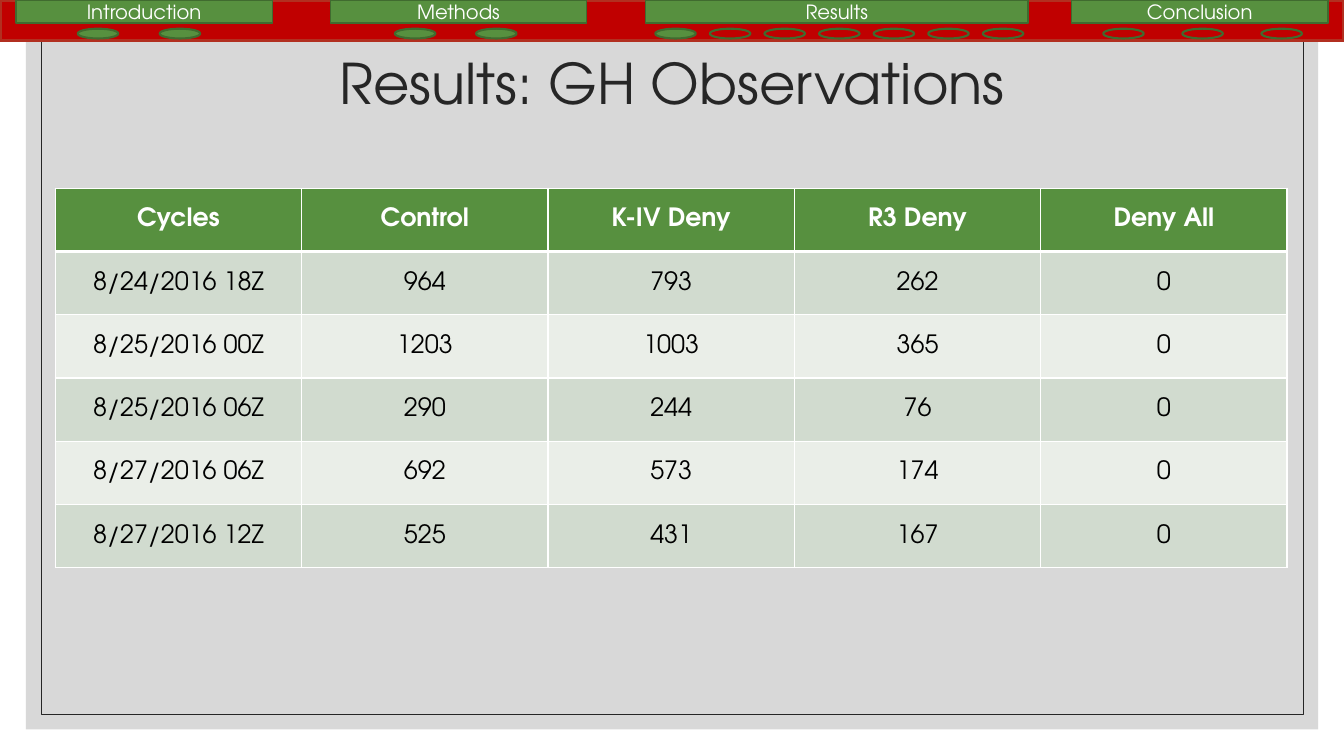
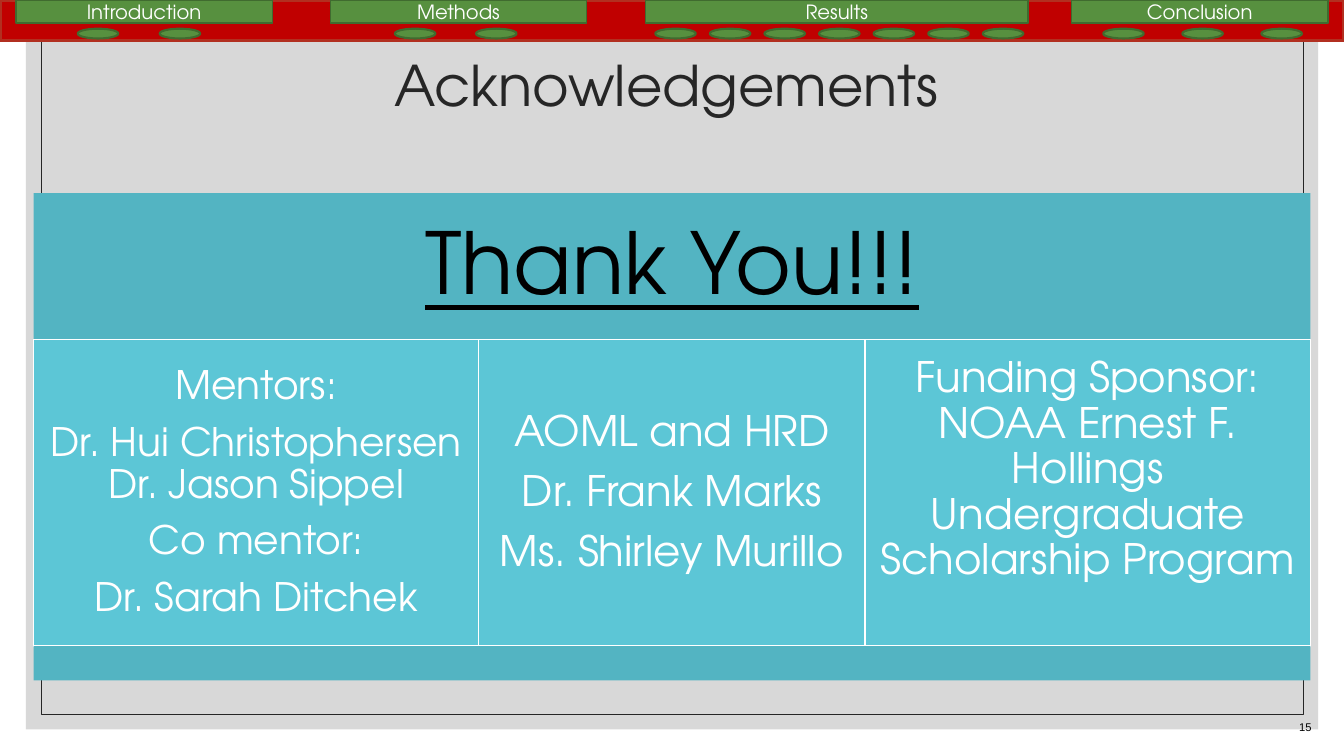
from dataclasses import dataclass
from itertools import accumulate

import pptx
import pptx.dml.color
import pptx.enum.shapes
import pptx.enum.text
import pptx.oxml.ns
import pptx.util
from lxml import etree

Pt = pptx.util.Pt
RECT = pptx.enum.shapes.MSO_SHAPE.RECTANGLE
OVAL = pptx.enum.shapes.MSO_SHAPE.OVAL
ALIGN = pptx.enum.text.PP_ALIGN
ANCHOR = pptx.enum.text.MSO_ANCHOR
qn = pptx.oxml.ns.qn


@dataclass(frozen=True)
class Theme:
    font: str = "TeX Gyre Adventor"
    number_font: str = "Arial"
    white: str = "FFFFFF"
    black: str = "000000"
    ink: str = "262626"
    backdrop: str = "BFBFBF"
    band: str = "C00000"
    band_line: str = "B22F20"
    green: str = "57903F"
    green_line: str = "406B2F"
    row_dark: str = "D1DBCF"
    row_light: str = "EAEEE8"
    teal: str = "53B4C2"
    teal_light: str = "5CC6D6"
    title_size: float = 40
    tab_size: float = 14
    table_size: float = 18
    thanks_size: float = 61
    number_size: float = 8


@dataclass(frozen=True)
class Section:
    name: str
    left: float
    width: float
    first_dot: float
    dot_step: float
    dots: int


@dataclass(frozen=True)
class Panel:
    width: float
    size: float
    space_after: float
    lines: tuple[str, ...]
    bottom_inset: float = 9


T = Theme()
SLIDE_W, SLIDE_H = 960, 540

SECTIONS = (
    Section("Introduction", 11.5, 183, 55.5, 58.5, 2),
    Section("Methods", 236, 183, 282, 58, 2),
    Section("Results", 461, 273.5, 468, 39, 7),
    Section("Conclusion", 765.5, 183, 788, 56.5, 3),
)

OBSERVATIONS = (
    ("Cycles", "Control", "K-IV Deny", "R3 Deny", "Deny All"),
    ("8/24/2016 18Z", "964", "793", "262", "0"),
    ("8/25/2016 00Z", "1203", "1003", "365", "0"),
    ("8/25/2016 06Z", "290", "244", "76", "0"),
    ("8/27/2016 06Z", "692", "573", "174", "0"),
    ("8/27/2016 12Z", "525", "431", "167", "0"),
)

PANELS = (
    Panel(318, 28, 10, ("Mentors:", "Dr. Hui Christophersen Dr. Jason Sippel",
                        "Co mentor:", "Dr. Sarah Ditchek")),
    Panel(276, 30, 10.5, ("AOML and HRD", "Dr. Frank Marks", "Ms. Shirley Murillo")),
    Panel(318, 30, 10.5, ("Funding Sponsor: NOAA Ernest F. Hollings\v"
                          "Undergraduate Scholarship Program",), 41.5),
)


def rgb(color: str) -> pptx.dml.color.RGBColor:
    return pptx.dml.color.RGBColor.from_string(color)


def write(tf, *lines: str, size: float, color: str, font: str = T.font,
          bold: bool = False, underline: bool = False, align=ALIGN.CENTER,
          anchor=ANCHOR.MIDDLE, line_spacing: float = 1.0, space_after: float = 0,
          insets: tuple[float, float, float, float] | None = None) -> None:
    tf.word_wrap = True
    tf.vertical_anchor = anchor
    if insets:
        tf.margin_left, tf.margin_top, tf.margin_right, tf.margin_bottom = map(Pt, insets)
    for i, line in enumerate(lines):
        p = tf.add_paragraph() if i else tf.paragraphs[0]
        p.text = line
        p.alignment = align
        p.line_spacing = line_spacing
        p.space_after = Pt(space_after)
        for r in p.runs:
            r.font.name = font
            r.font.size = Pt(size)
            r.font.bold = bold
            r.font.underline = underline
            r.font.color.rgb = rgb(color)


def add_shape(s, kind, left: float, top: float, width: float, height: float,
              fill: str | None = None, line: str | None = None,
              line_width: float = 1, alpha: int = 100):
    sp = s.shapes.add_shape(kind, Pt(left), Pt(top), Pt(width), Pt(height))
    sp.shadow.inherit = False
    if fill:
        sp.fill.solid()
        sp.fill.fore_color.rgb = rgb(fill)
        if alpha < 100:
            clr = next(sp.element.spPr.iter(qn("a:srgbClr")))
            etree.SubElement(clr, qn("a:alpha"), val=str(alpha * 1000))
    else:
        sp.fill.background()
    if line:
        sp.line.color.rgb = rgb(line)
        sp.line.width = Pt(line_width)
    else:
        sp.line.fill.background()
    return sp


def add_text(s, text: str, left: float, top: float, width: float, height: float,
             **fmt) -> None:
    sp = s.shapes.add_textbox(Pt(left), Pt(top), Pt(width), Pt(height))
    write(sp.text_frame, text, **fmt)


def add_base(prs, title: str, title_left: float, title_top: float, title_width: float,
             title_height: float, dots_done: int):
    s = prs.slides.add_slide(prs.slide_layouts[6])
    add_shape(s, RECT, 18.5, 18.5, 923, 502.5, T.backdrop, alpha=60)
    add_shape(s, RECT, 29.5, 29.5, 901.5, 481, line=T.ink, line_width=0.5)
    add_shape(s, RECT, 0, 0, SLIDE_W, 29, T.band, T.band_line, 2.25)
    dot = 0
    for section in SECTIONS:
        tab = add_shape(s, RECT, section.left, 0, section.width, 16.5,
                        T.green, T.green_line)
        write(tab.text_frame, section.name, size=T.tab_size, color=T.white)
        for i in range(section.dots):
            add_shape(s, OVAL, section.first_dot + i * section.dot_step, 20.5, 29, 7,
                      T.green if dot < dots_done else None, T.green_line, 1.5)
            dot += 1
    add_text(s, title, title_left, title_top, title_width, title_height,
             size=T.title_size, color=T.ink, line_spacing=0.9)
    return s


def set_borders(cell, top: float, bottom: float) -> None:
    tc_pr = cell._tc.get_or_add_tcPr()
    for side, width in (("L", 1), ("R", 1), ("T", top), ("B", bottom)):
        ln = etree.SubElement(tc_pr, qn(f"a:ln{side}"), w=str(Pt(width)))
        fill = etree.SubElement(ln, qn("a:solidFill"))
        etree.SubElement(fill, qn("a:srgbClr"), val=T.white)


def add_observations(s, left: float, top: float, col_width: float,
                     row_height: float) -> None:
    rows, cols = len(OBSERVATIONS), len(OBSERVATIONS[0])
    table = s.shapes.add_table(rows, cols, Pt(left), Pt(top), Pt(col_width * cols),
                               Pt(row_height * rows)).table
    table.horz_banding = False
    for col in table.columns:
        col.width = Pt(col_width)
    for r, values in enumerate(OBSERVATIONS):
        table.rows[r].height = Pt(row_height)
        header = r == 0
        fill = T.green if header else T.row_dark if r % 2 else T.row_light
        for c, value in enumerate(values):
            cell = table.cell(r, c)
            set_borders(cell, 3 if r == 1 else 1, 3 if header else 1)
            cell.fill.solid()
            cell.fill.fore_color.rgb = rgb(fill)
            cell.vertical_anchor = ANCHOR.MIDDLE
            write(cell.text_frame, value, size=T.table_size, bold=header,
                  color=T.white if header else T.black)


def add_thanks(s, left: float, top: float) -> None:
    width = sum(panel.width for panel in PANELS)
    head_height, panel_height, foot_height = 104.5, 219, 24.5
    panel_top = top + head_height
    head = add_shape(s, RECT, left, top, width, head_height, T.teal)
    write(head.text_frame, "Thank You!!!", size=T.thanks_size, color=T.black,
          underline=True, line_spacing=0.9, space_after=21, insets=(18, 18, 18, 18))
    lefts = accumulate((panel.width for panel in PANELS), initial=left)
    for panel, x in zip(PANELS, lefts):
        sp = add_shape(s, RECT, x, panel_top, panel.width, panel_height,
                       T.teal_light, T.white)
        write(sp.text_frame, *panel.lines, size=panel.size, color=T.white,
              line_spacing=0.9, space_after=panel.space_after,
              insets=(9, 9, 9, panel.bottom_inset))
    add_shape(s, RECT, left, panel_top + panel_height, width, foot_height, T.teal)


def main() -> None:
    prs = pptx.Presentation()
    prs.slide_width, prs.slide_height = Pt(SLIDE_W), Pt(SLIDE_H)

    s = add_base(prs, "Results: GH Observations", 84, 8, 792, 108, dots_done=5)
    add_observations(s, 39.5, 134.5, 176, 45.2)

    s = add_base(prs, "Acknowledgements", 152, 18, 648, 90, dots_done=14)
    add_thanks(s, 24, 138)
    add_text(s, "15", 744, 492, 200, 36, size=T.number_size, color=T.black,
             font=T.number_font, align=ALIGN.RIGHT, anchor=ANCHOR.BOTTOM)

    prs.save("out.pptx")


if __name__ == "__main__":
    main()
